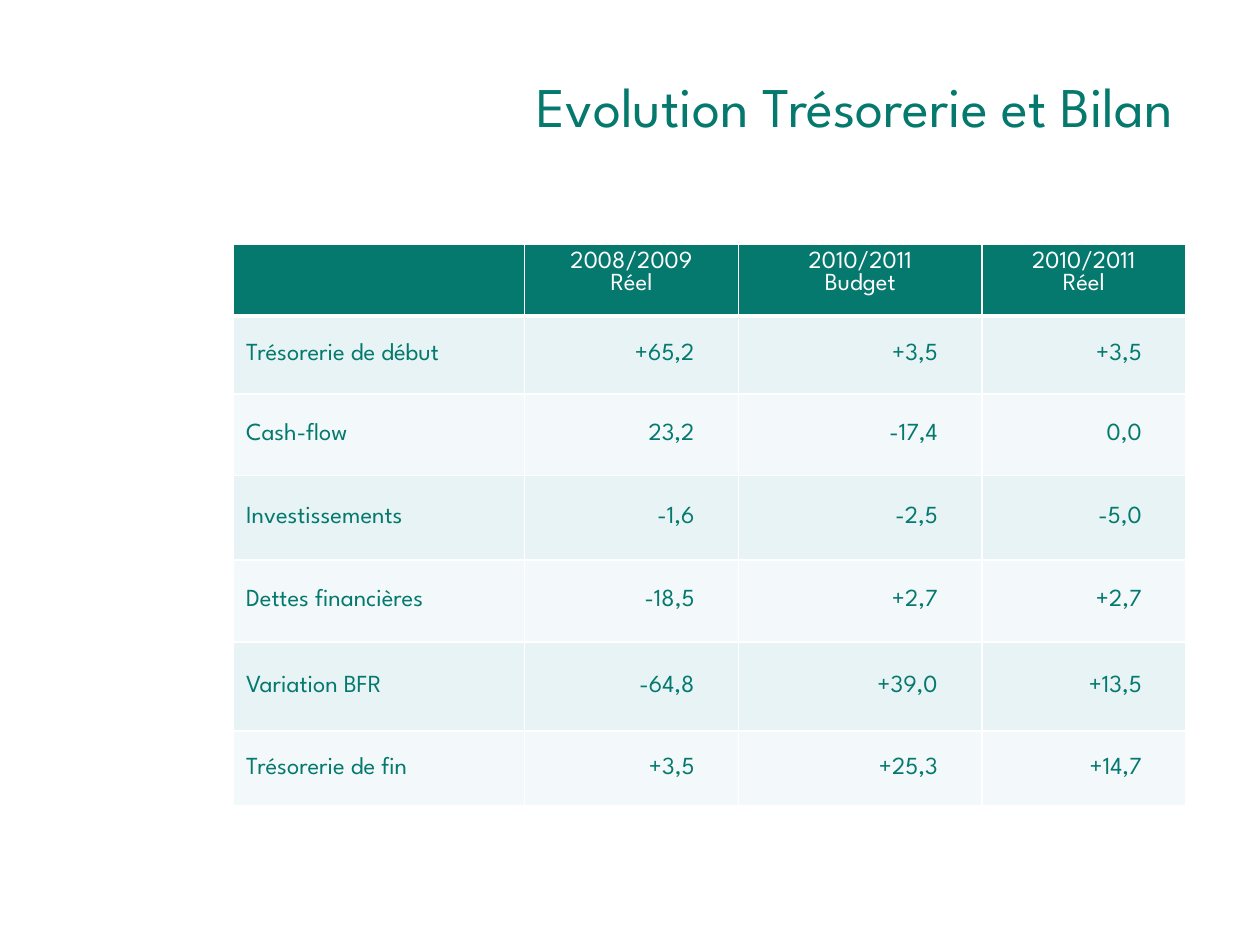
from lxml import etree
from pptx import Presentation
from pptx.dml.color import RGBColor
from pptx.enum.text import MSO_ANCHOR, PP_ALIGN
from pptx.oxml.ns import qn
from pptx.util import Pt

LEFT, CENTER, RIGHT = PP_ALIGN.LEFT, PP_ALIGN.CENTER, PP_ALIGN.RIGHT
TOP, MIDDLE = MSO_ANCHOR.TOP, MSO_ANCHOR.MIDDLE

HEADERS = ["", "2008/2009\nRéel", "2010/2011\nBudget", "2010/2011\nRéel"]
ROWS = [
    ["Trésorerie de début", "+65,2", "+3,5", "+3,5"],
    ["Cash-flow", "23,2", "-17,4", "0,0"],
    ["Investissements", "-1,6", "-2,5", "-5,0"],
    ["Dettes financières", "-18,5", "+2,7", "+2,7"],
    ["Variation BFR", "-64,8", "+39,0", "+13,5"],
    ["Trésorerie de fin", "+3,5", "+25,3", "+14,7"],
]
COL_WIDTHS = [166.3, 122.4, 139, 116.6]
ROW_HEIGHTS = [37, 44.4, 46.8, 48.2, 46.8, 51, 42.4]


def rgb(value):
    return RGBColor.from_string(value)


class Deck:
    font = "League Spartan"
    teal, white = "05796E", "FFFFFF"
    bands = ["E7F3F4", "F3F9FA"]

    def __init__(self, slide):
        self.s = slide

    def add_text(self, tf, text, size, color, align):
        for i, line in enumerate(text.split("\n")):
            p = tf.paragraphs[0] if i == 0 else tf.add_paragraph()
            p.alignment = align
            p.font.size = Pt(size)
            if line:
                r = p.add_run()
                r.text = line
                r.font.name = self.font
                r.font.size = Pt(size)
                r.font.color.rgb = rgb(color)

    def title(self, text, x, y, w, h):
        tf = self.s.shapes.add_textbox(Pt(x), Pt(y), Pt(w), Pt(h)).text_frame
        tf.word_wrap = True
        tf.vertical_anchor = MIDDLE
        self.add_text(tf, text, 32, self.teal, RIGHT)

    def borders(self, cell, bottom):
        """Draw white cell borders, with the given bottom width in points."""
        tc_pr = cell._tc.get_or_add_tcPr()
        for i, (side, width) in enumerate(zip("LRTB", (1, 1, 1, bottom))):
            ln = etree.Element(qn(f"a:ln{side}"), w=str(Pt(width)))
            fill = etree.SubElement(ln, qn("a:solidFill"))
            etree.SubElement(fill, qn("a:srgbClr"), val=self.white)
            tc_pr.insert(i, ln)

    def cell(self, cell, text, fill, color, align, anchor, right, bottom=1):
        cell.fill.solid()
        cell.fill.fore_color.rgb = rgb(fill)
        cell.vertical_anchor = anchor
        cell.margin_right = Pt(right)
        self.add_text(cell.text_frame, text, 14, color, align)
        self.borders(cell, bottom)

    def table(self, headers, rows, x, y, widths, heights):
        """Add a table with a teal header row and banded body rows."""
        table = self.s.shapes.add_table(
            len(heights), len(widths), Pt(x), Pt(y),
            Pt(sum(widths)), Pt(sum(heights))).table
        for col, width in zip(table.columns, widths):
            col.width = Pt(width)
        for row, height in zip(table.rows, heights):
            row.height = Pt(height)
        for c, text in enumerate(headers):
            self.cell(table.cell(0, c), text, self.teal, self.white,
                      CENTER, TOP, 7.2, bottom=3)
        for r, row in enumerate(rows):
            for c, text in enumerate(row):
                align, right = (RIGHT, 25.2) if c else (LEFT, 8.6)
                self.cell(table.cell(r + 1, c), text, self.bands[r % 2],
                          self.teal, align, MIDDLE, right)


def main():
    prs = Presentation()
    prs.slide_width, prs.slide_height = Pt(720), Pt(540)
    deck = Deck(prs.slides.add_slide(prs.slide_layouts[6]))
    deck.title("Evolution Trésorerie et Bilan", 0, 37.4, 677.5, 45.4)
    deck.table(HEADERS, ROWS, 133.4, 139.8, COL_WIDTHS, ROW_HEIGHTS)
    prs.save("out.pptx")


if __name__ == "__main__":
    main()
